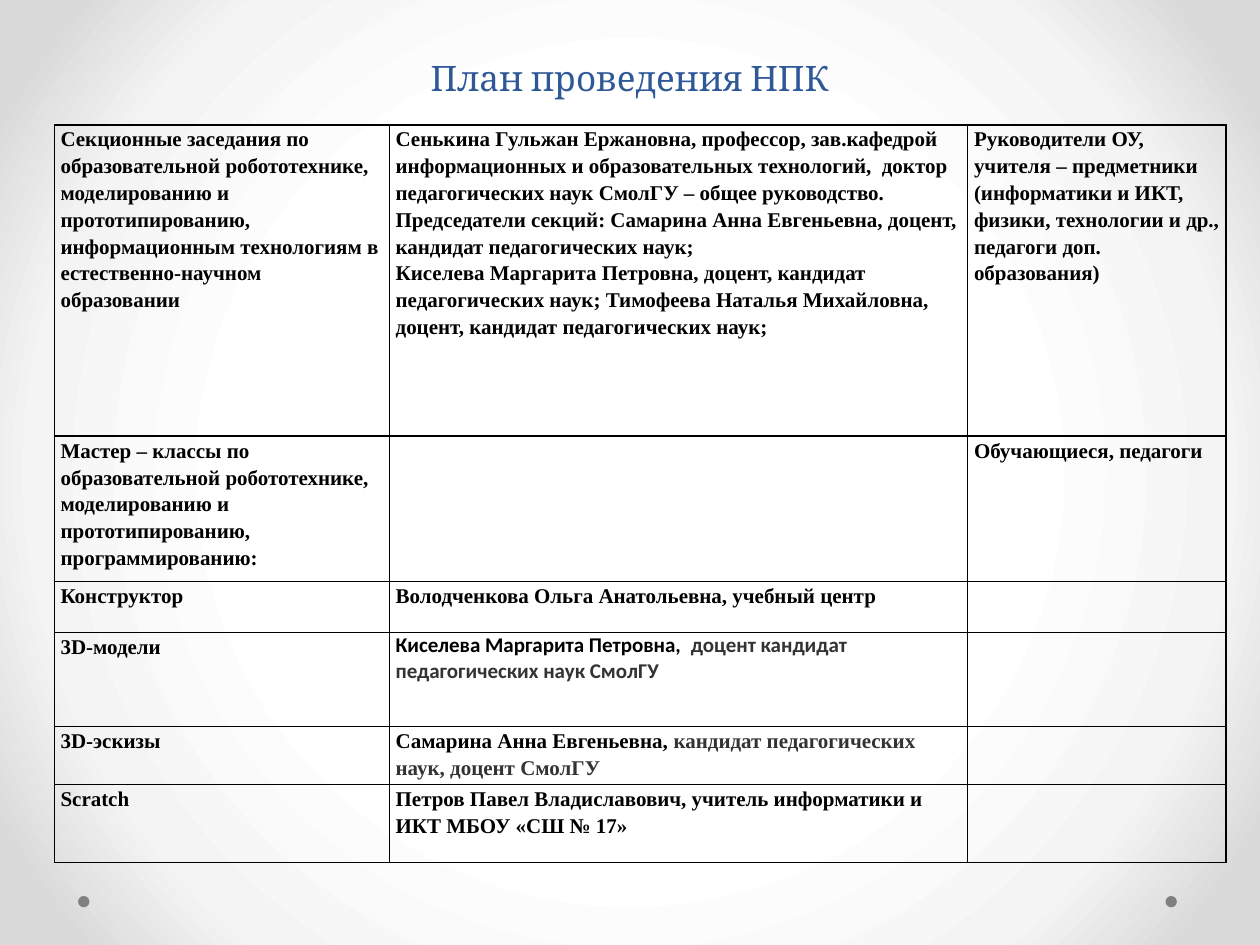
from lxml import etree
from pptx import Presentation
from pptx.dml.color import RGBColor
from pptx.enum.shapes import MSO_SHAPE
from pptx.enum.text import MSO_ANCHOR, PP_ALIGN
from pptx.oxml import parse_xml
from pptx.oxml.ns import nsdecls, qn
from pptx.util import Pt

BLACK = RGBColor(0x00, 0x00, 0x00)
DARK = RGBColor(0x33, 0x33, 0x33)
BLUE = RGBColor(0x2F, 0x58, 0x97)
GRAY = RGBColor(0x80, 0x80, 0x80)
BACKDROP = [(50, "FFFFFF"), (76, "F4F4F4"), (92, "DADADA")]
SERIF, SANS = "Times New Roman", "Calibri"

TITLE = "План проведения НПК"

# Each cell is a list of paragraphs; a tuple is a black part and a dark gray part
ROWS = [
    [["Секционные заседания по",
      "образовательной робототехнике, моделированию и прототипированию, "
      "информационным технологиям в естественно-научном образовании"],
     ["Сенькина Гульжан Ержановна, профессор, зав.кафедрой информационных и "
      "образовательных технологий,  доктор педагогических наук СмолГУ – общее руководство.",
      "Председатели секций: Самарина Анна Евгеньевна, доцент, кандидат педагогических наук;",
      "Киселева Маргарита Петровна, доцент, кандидат педагогических наук; "
      "Тимофеева Наталья Михайловна, доцент, кандидат педагогических наук;"],
     ["Руководители ОУ, учителя – предметники (информатики и ИКТ, физики, "
      "технологии и др., педагоги доп. образования)"]],
    [["Мастер – классы по образовательной робототехнике, моделированию и "
      "прототипированию, программированию:"],
     [],
     ["Обучающиеся, педагоги"]],
    [["Конструктор"], ["Володченкова Ольга Анатольевна, учебный центр"], []],
    [["3D-модели"],
     [("Киселева Маргарита Петровна,  ", "доцент кандидат педагогических наук СмолГУ")],
     []],
    [["3D-эскизы"],
     [("Самарина Анна Евгеньевна, ", "кандидат педагогических наук, доцент СмолГУ")],
     []],
    [["Scratch"],
     ["Петров Павел Владиславович, учитель информатики и ИКТ МБОУ «СШ № 17»"],
     []],
]
SANS_CELL = (3, 1)
COL_WIDTHS = [191.5, 330.5, 147.5]
ROW_HEIGHTS = [178, 83, 29.3, 53.7, 32.5, 44.6]
TABLE_LEFT, TABLE_TOP = 31, 71.3
DOT_LEFTS, DOT_TOP, DOT_SIZE = [44.6, 666], 512, 6.5


def set_background(s):
    stops = "".join(f'<a:gs pos="{pos * 1000}"><a:srgbClr val="{color}"/></a:gs>'
                    for pos, color in BACKDROP)
    bg = parse_xml(
        f'<p:bg {nsdecls("p", "a")}><p:bgPr><a:gradFill rotWithShape="1">'
        f'<a:gsLst>{stops}</a:gsLst><a:path path="circle">'
        '<a:fillToRect l="50000" t="50000" r="50000" b="50000"/></a:path>'
        '</a:gradFill><a:effectLst/></p:bgPr></p:bg>')
    s.element.cSld.insert(0, bg)


def set_borders(cell):
    tcPr = cell._tc.get_or_add_tcPr()
    for i, side in enumerate(("lnL", "lnR", "lnT", "lnB")):
        ln = etree.Element(qn(f"a:{side}"), w=str(Pt(1)))
        fill = etree.SubElement(ln, qn("a:solidFill"))
        etree.SubElement(fill, qn("a:srgbClr"), val=str(BLACK))
        tcPr.insert(i, ln)


def fill_cell(cell, paragraphs, font, spacing):
    cell.margin_left = cell.margin_right = Pt(3.6)
    cell.margin_top = cell.margin_bottom = 0
    cell.fill.background()
    set_borders(cell)
    tf = cell.text_frame
    for i, parts in enumerate(paragraphs or [""]):
        p = tf.paragraphs[0] if i == 0 else tf.add_paragraph()
        p.line_spacing = spacing
        p.font.name, p.font.size, p.font.bold = font, Pt(12), True
        p.font.color.rgb = BLACK
        if isinstance(parts, str):
            parts = (parts,)
        for text, color in zip(parts, (BLACK, DARK)):
            if text:
                r = p.add_run()
                r.text = text
                r.font.color.rgb = color


prs = Presentation()
prs.slide_width, prs.slide_height = Pt(720), Pt(540)
s = prs.slides.add_slide(prs.slide_layouts[6])
set_background(s)

# Corner dots
for left in DOT_LEFTS:
    sp = s.shapes.add_shape(MSO_SHAPE.OVAL, Pt(left), Pt(DOT_TOP), Pt(DOT_SIZE), Pt(DOT_SIZE))
    sp.shadow.inherit = False
    sp.fill.solid()
    sp.fill.fore_color.rgb = GRAY
    sp.line.fill.background()

# Title
tf = s.shapes.add_textbox(Pt(36), Pt(26), Pt(648), Pt(34)).text_frame
tf.word_wrap = True
tf.vertical_anchor = MSO_ANCHOR.BOTTOM
p = tf.paragraphs[0]
p.text = TITLE
p.alignment = PP_ALIGN.CENTER
p.font.name, p.font.size = "Cambria", Pt(20)
p.font.color.rgb = BLUE

# Schedule table
table = s.shapes.add_table(len(ROWS), len(COL_WIDTHS), Pt(TABLE_LEFT), Pt(TABLE_TOP),
                           Pt(sum(COL_WIDTHS)), Pt(sum(ROW_HEIGHTS))).table
table.first_row = table.horz_banding = False
for column, width in zip(table.columns, COL_WIDTHS):
    column.width = Pt(width)
for i, (row, height) in enumerate(zip(ROWS, ROW_HEIGHTS)):
    table.rows[i].height = Pt(height)
    for j, paragraphs in enumerate(row):
        font, spacing = (SANS, 1.0) if (i, j) == SANS_CELL else (SERIF, 1.15)
        fill_cell(table.cell(i, j), paragraphs, font, spacing)

prs.save("out.pptx")
